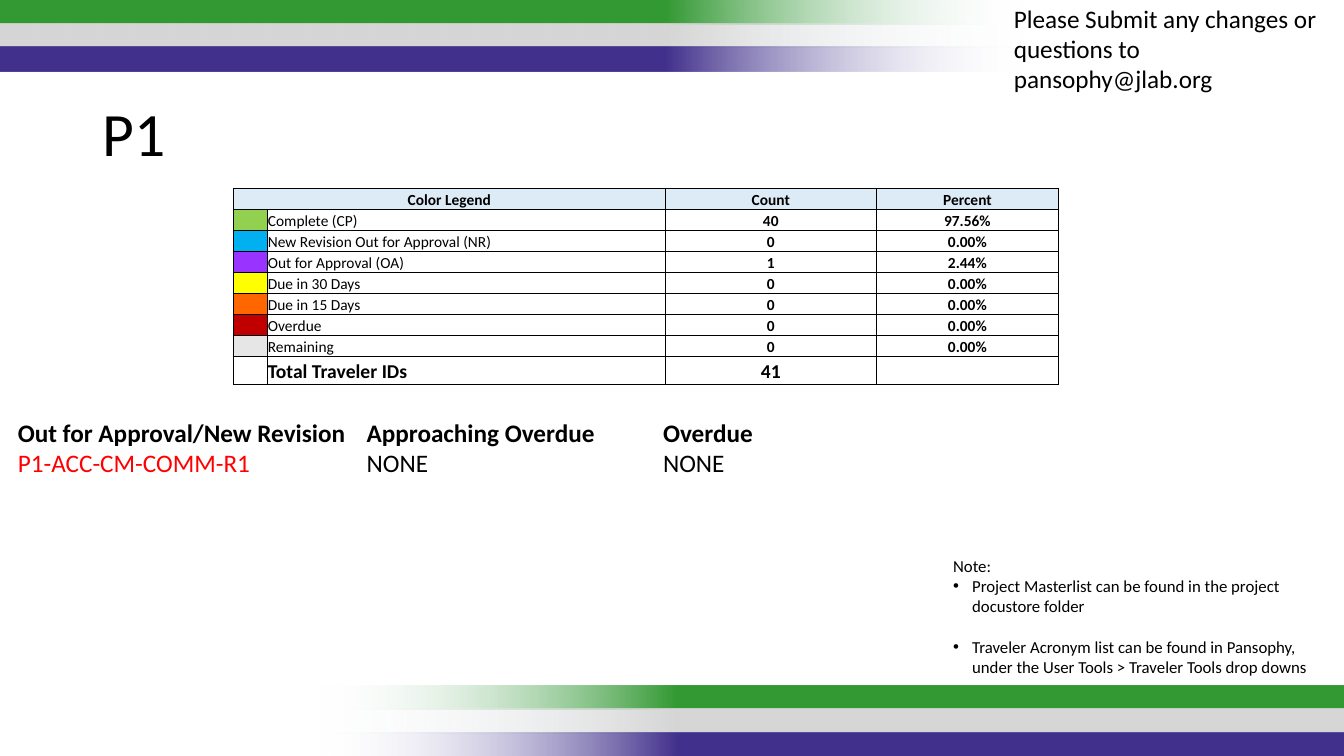
"""Build the P1 traveler status slide."""
import dataclasses
import lxml.etree
import pptx
import pptx.dml.color
import pptx.enum.shapes
import pptx.enum.text
import pptx.oxml
import pptx.oxml.ns
import pptx.util

Cm = pptx.util.Cm
Pt = pptx.util.Pt
Rgb = pptx.dml.color.RGBColor.from_string
qn = pptx.oxml.ns.qn
Align = pptx.enum.text.PP_ALIGN
Anchor = pptx.enum.text.MSO_ANCHOR


@dataclasses.dataclass(frozen=True)
class Theme:
    font: str = "Calibri"
    ink: str = "000000"
    alert: str = "FF0000"
    head: str = "DDEBF7"
    fade: str = "F7FAFD"
    bands: tuple = ("339933", "D6D6D6", "42318C")
    title: int = 44
    body: int = 18
    total: int = 14
    note: int = 12
    cell: int = 11


theme = Theme()


def style(par, size, bold=False, color=theme.ink):
    font = par.font
    font.name, font.size, font.bold = theme.font, Pt(size), bold
    font.color.rgb = Rgb(color)


def add_box(left, top, width, height, lines):
    frame = slide.shapes.add_textbox(Cm(left), Cm(top), Cm(width), Cm(height)).text_frame
    frame.word_wrap = True
    frame.text = "\n".join(lines)
    return frame.paragraphs


deck = pptx.Presentation()
deck.slide_width, deck.slide_height = Cm(33.87), Cm(19.05)
slide = deck.slides.add_slide(deck.slide_layouts[5])

for left, top, turn in ((-0.03, 0, 180), (8.06, 17.27, 0)):
    for i, color in enumerate(theme.bands):
        band = slide.shapes.add_shape(
            pptx.enum.shapes.MSO_SHAPE.RECTANGLE,
            Cm(left), Cm(top + 0.59 * i), Cm(25.83), Cm(0.61))
        band.rotation = turn
        band.shadow.inherit = False
        band.line.fill.background()
        band.fill.gradient()
        grad = band.fill._xPr.find(qn("a:gradFill"))
        grad.set("rotWithShape", "1")
        band.fill.gradient_angle = 0
        stops = grad.find(qn("a:gsLst"))
        stops.clear()
        for spot, tint in ((0, theme.fade), (35, color), (100, color)):
            stop = lxml.etree.SubElement(stops, qn("a:gs"), pos=str(spot * 1000))
            paint = lxml.etree.SubElement(stop, qn("a:srgbClr"), val=tint)
            if spot == 0:
                lxml.etree.SubElement(paint, qn("a:alpha"), val="0")

title = slide.shapes.title
title.left, title.top, title.width, title.height = Cm(2.34), Cm(2.18), Cm(29.21), Cm(2.51)
title.text = "P1"
title.text_frame.vertical_anchor = Anchor.MIDDLE
par = title.text_frame.paragraphs[0]
par.alignment, par.line_spacing = Align.LEFT, 0.9
style(par, theme.title)

rows = (
    (theme.head, "Color Legend", "Count", "Percent"),
    ("92D050", "Complete (CP)", "40", "97.56%"),
    ("00B0F0", "New Revision Out for Approval (NR)", "0", "0.00%"),
    ("9933FF", "Out for Approval (OA)", "1", "2.44%"),
    ("FFFF00", "Due in 30 Days", "0", "0.00%"),
    ("FF6600", "Due in 15 Days", "0", "0.00%"),
    ("C00000", "Overdue", "0", "0.00%"),
    ("E7E6E6", "Remaining", "0", "0.00%"),
    (None, "Total Traveler IDs", "41", ""),
)
last = len(rows) - 1
table = slide.shapes.add_table(
    len(rows), 4, Cm(5.89), Cm(4.75), Cm(20.78), Cm(4.93)).table
table.first_row = table.horz_banding = False
for col, width in zip(table.columns, (0.84, 10.03, 5.33, 4.58)):
    col.width = Cm(width)
for r, (color, *words) in enumerate(rows):
    table.rows[r].height = Cm(0.69 if r == last else 0.53)
    texts = [words[0], "", *words[1:]] if r == 0 else ["", *words]
    for c, text in enumerate(texts):
        cell = table.cell(r, c)
        cell.text = text
        cell.vertical_anchor = Anchor.BOTTOM
        cell.margin_left = cell.margin_right = cell.margin_top = Cm(0.02)
        cell.margin_bottom = 0
        par = cell.text_frame.paragraphs[0]
        par.alignment = Align.LEFT if c == 1 and r else Align.CENTER
        size = theme.total if r == last else theme.cell
        style(par, size, r in (0, last) or c > 1)
        if not text:
            par._p.get_or_add_endParaRPr().set("sz", str(size * 100))
        props = cell._tc.get_or_add_tcPr()
        edges = (("L", c == 0), ("R", c == 3), ("T", r == 0), ("B", r == last))
        for side, outer in edges:
            line = lxml.etree.SubElement(
                props, qn("a:ln" + side), w=str(Pt(1 if outer else 0.5)))
            fill = lxml.etree.SubElement(line, qn("a:solidFill"))
            lxml.etree.SubElement(fill, qn("a:srgbClr"), val=theme.ink)
        if color and (r == 0 or c == 0):
            cell.fill.solid()
            cell.fill.fore_color.rgb = Rgb(color)
        else:
            cell.fill.background()
table.cell(0, 0).merge(table.cell(0, 1))

lists = (
    (0.2, 8.76, "Out for Approval/New Revision", "P1-ACC-CM-COMM-R1", theme.alert),
    (8.99, 7.49, "Approaching Overdue", "NONE", theme.ink),
    (16.46, 15.32, "Overdue", "NONE", theme.ink),
)
for left, width, head, item, color in lists:
    pars = add_box(left, 10.39, width, 1.8, (head, item))
    style(pars[0], theme.body, True)
    style(pars[1], theme.body, color=color)

pars = add_box(25.3, -0.05, 8.59, 2.57,
               ["Please Submit any changes or questions to pansophy@jlab.org"])
style(pars[0], theme.body)

pars = add_box(23.77, 13.87, 10.08, 3.33, (
    "Note:",
    "Project Masterlist can be found in the project docustore folder",
    "Traveler Acronym list can be found in Pansophy, "
    "under the User Tools > Traveler Tools drop downs"))
for par in pars[1:]:
    props = par._p.get_or_add_pPr()
    props.set("marL", str(Cm(0.48)))
    props.set("indent", str(Cm(-0.48)))
    lxml.etree.SubElement(props, qn("a:buFont"), typeface="Arial")
    lxml.etree.SubElement(props, qn("a:buChar"), char="•")
pars[2].space_before = Pt(14.6)
for par in pars:
    style(par, theme.note)

deck.save("out.pptx")
